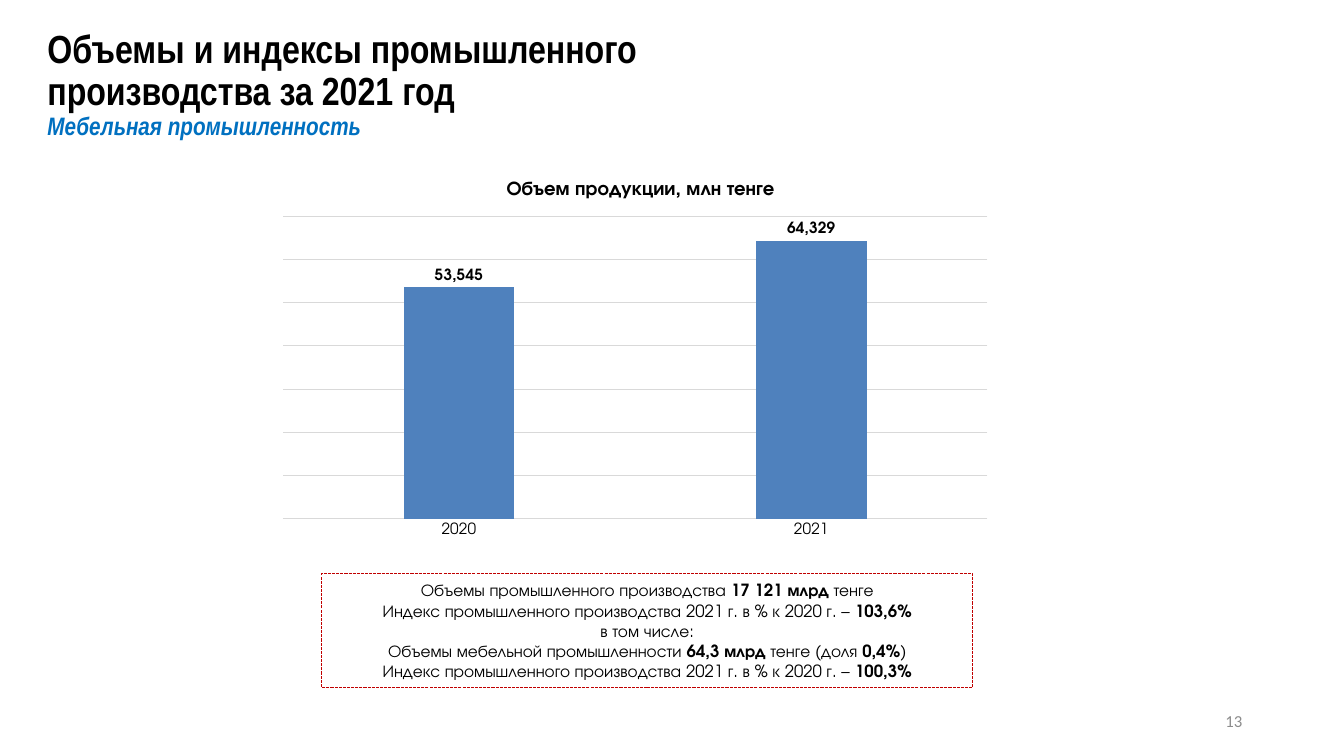
import pptx
import pptx.chart.data
import pptx.dml.color
import pptx.enum.chart
import pptx.enum.dml
import pptx.enum.shapes
import pptx.enum.text
import pptx.util

Inches = pptx.util.Inches
Pt = pptx.util.Pt
RGBColor = pptx.dml.color.RGBColor
Align = pptx.enum.text.PP_ALIGN
Anchor = pptx.enum.text.MSO_ANCHOR

BLACK = RGBColor(0x00, 0x00, 0x00)
BLUE = RGBColor(0x00, 0x70, 0xC0)
BAR_BLUE = RGBColor(0x4F, 0x81, 0xBD)
DARK_RED = RGBColor(0xC0, 0x00, 0x00)
GRID_GRAY = RGBColor(0xD9, 0xD9, 0xD9)
NUMBER_GRAY = RGBColor(0x8C, 0x8C, 0x8C)

TITLE_FONT = "Arial Narrow"
BODY_FONT = "TeX Gyre Adventor"

INDEX_TEXT = "Индекс промышленного производства 2021 г. в % к 2020 г. – "
SUMMARY = [
    [("Объемы промышленного производства ", False), ("17 121 млрд ", True), ("тенге", False)],
    [(INDEX_TEXT, False), ("103,6%", True)],
    [("в том числе:", False)],
    [("Объемы мебельной промышленности ", False), ("64,3 млрд ", True),
     ("тенге (доля ", False), ("0,4%", True), (")", False)],
    [(INDEX_TEXT, False), ("100,3%", True)],
]


def style_font(font, name, size, color, bold=None):
    font.name = name
    font.size = Pt(size)
    font.color.rgb = color
    font.bold = bold


def style_line(line, color):
    line.color.rgb = color
    line.width = Pt(0.75)


def fill_title(title):
    title.left, title.top = Inches(0.37), Inches(0.35)
    title.width, title.height = Inches(8.48), Inches(0.99)
    frame = title.text_frame
    frame.vertical_anchor = Anchor.MIDDLE
    frame.auto_size = pptx.enum.text.MSO_AUTO_SIZE.NONE
    paragraph = frame.paragraphs[0]
    paragraph.alignment = Align.LEFT
    paragraph.line_spacing = 0.9
    style_font(paragraph.font, TITLE_FONT, 28, BLACK, True)
    for text in ("Объемы и индексы промышленного", "производства за 2021 год"):
        run = paragraph.add_run()
        run.text = text
        style_font(run.font, TITLE_FONT, 28, BLACK, True)
        paragraph.add_line_break()
    subtitle = paragraph.add_run()
    subtitle.text = "Мебельная промышленность"
    style_font(subtitle.font, TITLE_FONT, 18, BLUE, True)
    subtitle.font.italic = True


def add_label(slide, text, left, top, width, height, alignment, anchor, font):
    box = slide.shapes.add_textbox(Inches(left), Inches(top), Inches(width), Inches(height))
    frame = box.text_frame
    frame.word_wrap = True
    frame.vertical_anchor = anchor
    paragraph = frame.paragraphs[0]
    paragraph.text = text
    paragraph.alignment = alignment
    style_font(paragraph.font, *font)


def add_volume_chart(slide):
    data = pptx.chart.data.CategoryChartData(number_format="#,##0")
    data.categories = ["2020", "2021"]
    data.add_series("Объем продукции", (53545, 64329))
    chart = slide.shapes.add_chart(
        pptx.enum.chart.XL_CHART_TYPE.COLUMN_CLUSTERED,
        Inches(2.66), Inches(2.08), Inches(7.28), Inches(3.32), data).chart
    chart.has_title = False
    chart.has_legend = False
    style_font(chart.font, BODY_FONT, 11, BLACK)

    category_axis = chart.category_axis
    category_axis.major_tick_mark = pptx.enum.chart.XL_TICK_MARK.NONE
    style_line(category_axis.format.line, GRID_GRAY)
    style_font(category_axis.tick_labels.font, BODY_FONT, 11, BLACK)

    value_axis = chart.value_axis
    value_axis.visible = False
    value_axis.minimum_scale = 0
    value_axis.maximum_scale = 70000
    value_axis.major_unit = 10000
    value_axis.has_major_gridlines = True
    style_line(value_axis.major_gridlines.format.line, GRID_GRAY)

    plot = chart.plots[0]
    plot.vary_by_categories = False
    plot.gap_width = 219
    plot.overlap = -27
    fill = plot.series[0].format.fill
    fill.solid()
    fill.fore_color.rgb = BAR_BLUE
    plot.has_data_labels = True
    labels = plot.data_labels
    labels.show_value = True
    labels.number_format = "#,##0"
    labels.number_format_is_linked = False
    labels.position = pptx.enum.chart.XL_LABEL_POSITION.OUTSIDE_END
    style_font(labels.font, BODY_FONT, 11, BLACK, True)


def add_summary(slide):
    shape = slide.shapes.add_shape(
        pptx.enum.shapes.MSO_SHAPE.RECTANGLE,
        Inches(3.19), Inches(5.69), Inches(6.46), Inches(1.13))
    shape.shadow.inherit = False
    shape.fill.background()
    style_line(shape.line, DARK_RED)
    shape.line.dash_style = pptx.enum.dml.MSO_LINE.SQUARE_DOT
    frame = shape.text_frame
    frame.word_wrap = True
    frame.vertical_anchor = Anchor.MIDDLE
    for index, parts in enumerate(SUMMARY):
        paragraph = frame.add_paragraph() if index else frame.paragraphs[0]
        paragraph.alignment = Align.CENTER
        style_font(paragraph.font, BODY_FONT, 12, BLACK)
        for text, bold in parts:
            run = paragraph.add_run()
            run.text = text
            run.font.bold = bold


def main():
    presentation = pptx.Presentation()
    presentation.slide_width = Inches(13.33)
    presentation.slide_height = Inches(7.5)
    slide = presentation.slides.add_slide(presentation.slide_layouts[5])
    fill_title(slide.shapes.title)
    add_label(slide, "Объем продукции, млн тенге", 3.92, 1.7, 4.87, 0.34,
              Align.CENTER, Anchor.TOP, (BODY_FONT, 14, BLACK, True))
    add_volume_chart(slide)
    add_summary(slide)
    add_label(slide, "13", 9.42, 6.95, 3, 0.4,
              Align.RIGHT, Anchor.MIDDLE, ("Calibri", 12, NUMBER_GRAY))
    presentation.save("out.pptx")


if __name__ == "__main__":
    main()
